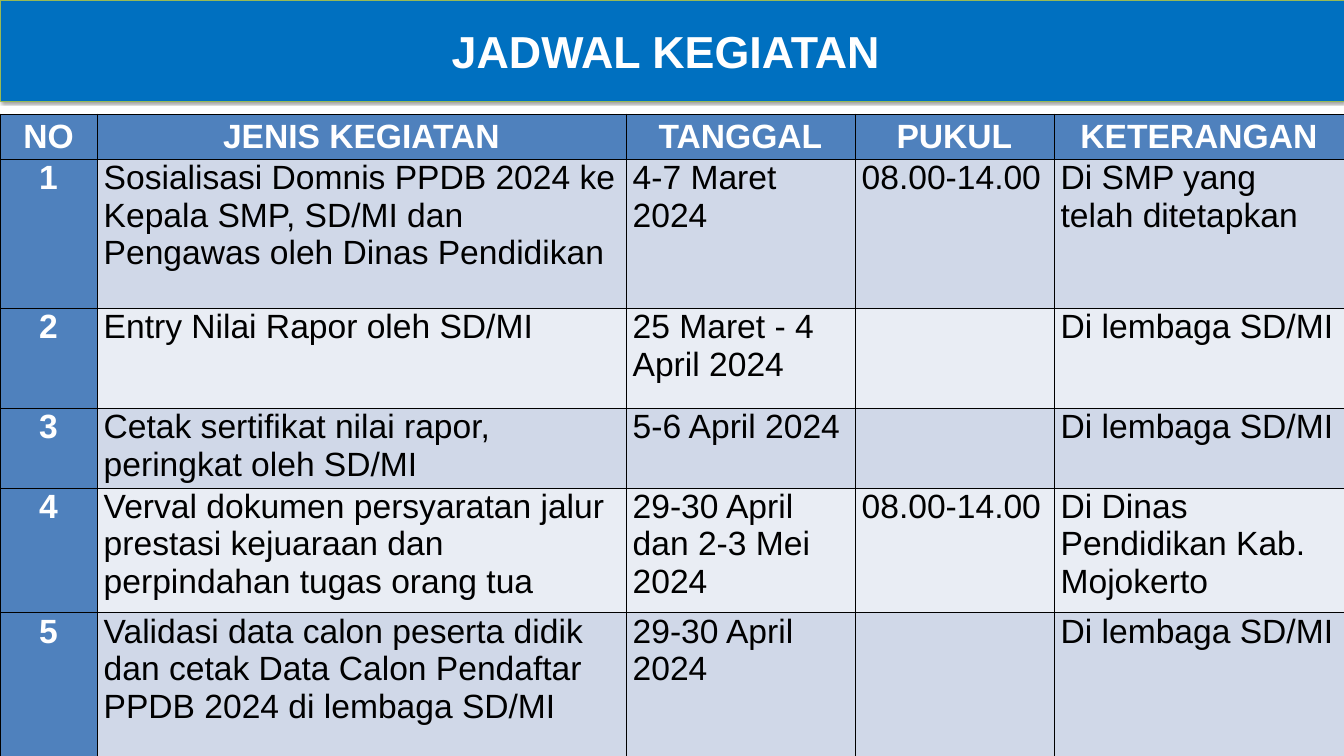
from dataclasses import dataclass

from lxml import etree
from pptx import Presentation
from pptx.dml.color import RGBColor
from pptx.enum import text
from pptx.oxml import ns
from pptx.util import Emu, Pt

SCALE = 914400 / 67.2  # EMU in one px


@dataclass(frozen=True)
class Theme:
    font: str = "Arial"
    title: int = 48
    body: int = 36
    white: str = "FFFFFF"
    black: str = "000000"
    banner: str = "0070C0"
    edge: str = "98B955"
    head: str = "4F81BD"
    bands: tuple = ("D0D8E8", "E9EDF4")


THEME = Theme()
WIDTH, HEIGHT = 1344, 756
COLS = [97, 529, 229, 199, 290]
ROWS = [45, 149, 100, 80, 125, 149]
HEADS = ["NO", "JENIS KEGIATAN", "TANGGAL", "PUKUL", "KETERANGAN"]
EVENTS = [
    ("Sosialisasi Domnis PPDB 2024 ke Kepala SMP, SD/MI dan Pengawas oleh Dinas Pendidikan",
     "4-7 Maret 2024", "08.00-14.00", "Di SMP yang telah ditetapkan"),
    ("Entry Nilai Rapor oleh SD/MI",
     "25 Maret - 4 April 2024", "", "Di lembaga SD/MI"),
    ("Cetak sertifikat nilai rapor, peringkat oleh SD/MI",
     "5-6 April 2024", "", "Di lembaga SD/MI"),
    ("Verval dokumen persyaratan jalur prestasi kejuaraan dan perpindahan tugas orang tua",
     "29-30 April dan 2-3 Mei 2024", "08.00-14.00", "Di Dinas Pendidikan Kab. Mojokerto"),
    ("Validasi data calon peserta didik dan cetak Data Calon Pendaftar PPDB 2024 di lembaga SD/MI",
     "29-30 April 2024", "", "Di lembaga SD/MI"),
]


def px(n):
    return Emu(round(n * SCALE))


def rgb(code):
    return RGBColor.from_string(code)


def assign(obj, **values):
    for name, value in values.items():
        setattr(obj, name, value)


def paint(fill, code):
    fill.solid()
    fill.fore_color.rgb = rgb(code)


def node(parent, tag, **attrs):
    return etree.SubElement(parent, ns.qn(tag), attrs)


def write(frame, words, size, color, bold, center, gap=0):
    para = frame.paragraphs[0]
    align = text.PP_ALIGN.CENTER if center else text.PP_ALIGN.LEFT
    assign(para, alignment=align, space_before=Pt(gap), space_after=Pt(gap))
    run = para.add_run()
    run.text = words
    assign(run.font, name=THEME.font, size=Pt(size), bold=bold)
    run.font.color.rgb = rgb(color)


def shade(shape):
    """Give the shape a soft shadow just below it."""
    shape.shadow.inherit = False
    effects = shape.element.spPr.find(ns.qn("a:effectLst"))
    outer = node(effects, "a:outerShdw", blurRad="40000", dist="20000",
                 dir="5400000", rotWithShape="0")
    color = node(outer, "a:srgbClr", val=THEME.black)
    node(color, "a:alpha", val="38000")


def border(cell):
    props = cell._tc.get_or_add_tcPr()
    for side in "LRTB":
        line = node(props, f"a:ln{side}", w=str(Pt(1)))
        node(node(line, "a:solidFill"), "a:srgbClr", val=THEME.black)


def banner(slide, words):
    title = slide.shapes.title
    assign(title, left=0, top=0, width=px(WIDTH), height=px(101))
    paint(title.fill, THEME.banner)
    paint(title.line.fill, THEME.edge)
    title.line.width = Pt(0.75)
    shade(title)
    assign(title.text_frame, word_wrap=True, auto_size=text.MSO_AUTO_SIZE.NONE,
           vertical_anchor=text.MSO_ANCHOR.MIDDLE)
    write(title.text_frame, words, THEME.title, THEME.white, True, True)


def style(cell, words, row, col):
    top, key = row == 0, row == 0 or col == 0
    anchor = text.MSO_ANCHOR.MIDDLE if top else text.MSO_ANCHOR.TOP
    assign(cell, margin_left=Pt(7.2), margin_right=Pt(7.2), margin_top=0,
           margin_bottom=0, vertical_anchor=anchor)
    border(cell)
    paint(cell.fill, THEME.head if key else THEME.bands[(row - 1) % 2])
    if words:
        color = THEME.white if key else THEME.black
        write(cell.text_frame, words, THEME.body, color, key, key, gap=3)


def schedule(slide):
    data = [HEADS] + [(str(n), *event) for n, event in enumerate(EVENTS, 1)]
    table = slide.shapes.add_table(len(ROWS), len(COLS), 0, px(114),
                                   px(sum(COLS)), px(sum(ROWS))).table
    for col, width in zip(table.columns, COLS):
        col.width = px(width)
    for row, height in zip(table.rows, ROWS):
        row.height = px(height)
    for r, line in enumerate(data):
        for c, words in enumerate(line):
            style(table.cell(r, c), words, r, c)


def main():
    deck = Presentation()
    assign(deck, slide_width=px(WIDTH), slide_height=px(HEIGHT))
    slide = deck.slides.add_slide(deck.slide_layouts[5])
    schedule(slide)
    banner(slide, "JADWAL KEGIATAN ")
    deck.save("out.pptx")


if __name__ == "__main__":
    main()
